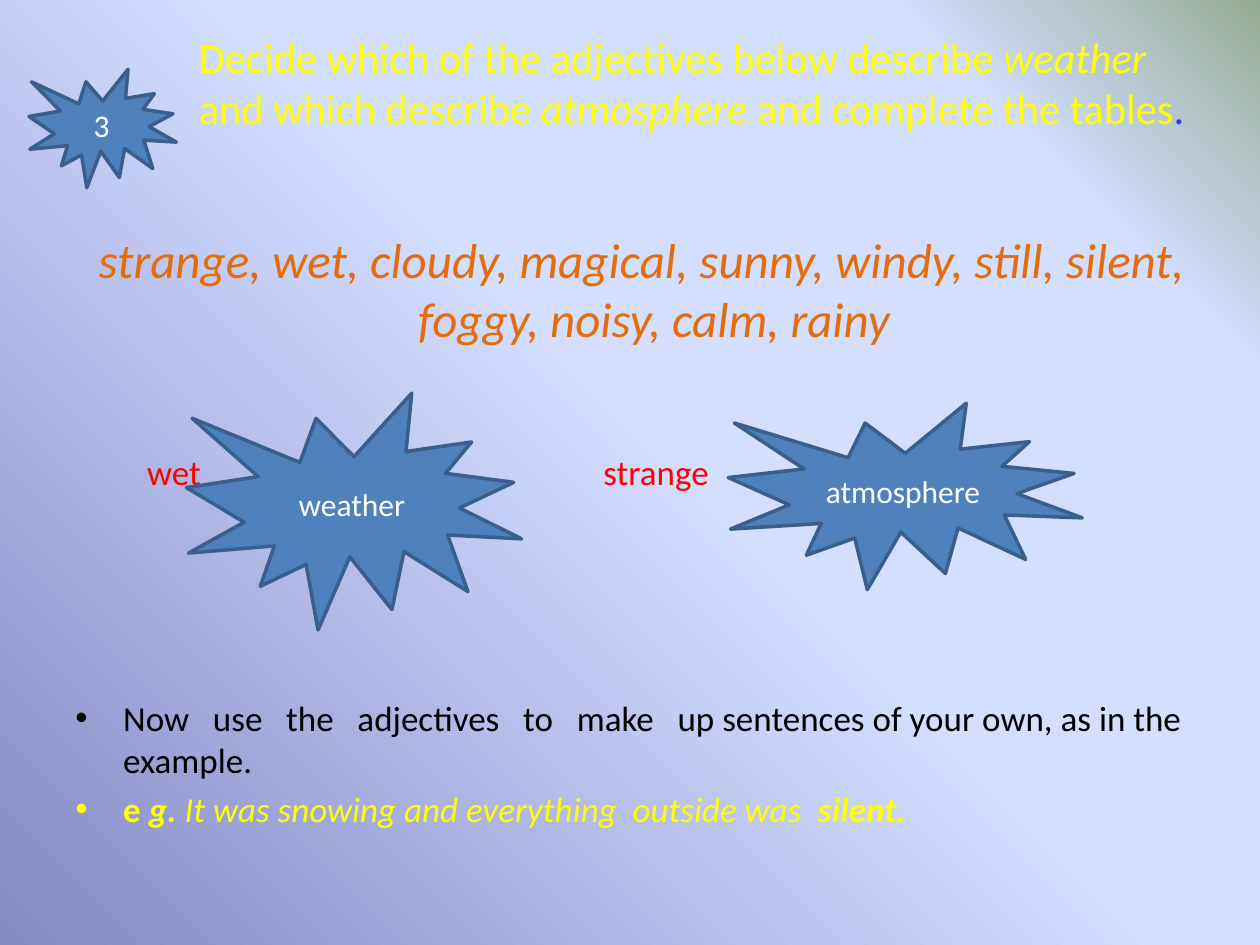
import pptx
import pptx.dml.color
import pptx.enum.shapes
import pptx.enum.text
import pptx.oxml
import pptx.oxml.ns
import pptx.util
from pptx.util import Inches

YELLOW, ORANGE, RED, BLUE = "FFFF00", "E46C0A", "FF0000", "3333FF"
BLACK, WHITE, SEAL_FILL, SEAL_LINE = "000000", "FFFFFF", "4F81BD", "3A5F8C"
MIDDLE = pptx.enum.text.MSO_ANCHOR.MIDDLE
CENTER = pptx.enum.text.PP_ALIGN.CENTER


def color(value):
    """Turn a hex string into a colour."""
    return pptx.dml.color.RGBColor.from_string(value)


def paint_background(slide, stops, angle):
    """Fill the slide with a linear gradient of (percent, colour) stops."""
    fill = slide.background.fill
    fill.gradient()
    fill.gradient_angle = angle
    stop_list = slide.element.find(".//" + pptx.oxml.ns.qn("a:gsLst"))
    for stop in list(stop_list):
        stop_list.remove(stop)
    for percent, value in stops:
        stop_list.append(pptx.oxml.parse_xml(
            f'<a:gs {pptx.oxml.ns.nsdecls("a")} pos="{percent * 1000}">'
            f'<a:srgbClr val="{value}"/></a:gs>'))


def add_span(para, text, size, value, bold=False, italic=False):
    """Add one run of text to a paragraph."""
    span = para.add_run()
    span.text = text
    font = span.font
    font.name, font.size = "Calibri", pptx.util.Pt(size)
    font.bold, font.italic = bold, italic
    font.color.rgb = color(value)


def add_text(slide, left, top, width, height, size, paragraphs):
    """Add a wrapping text box whose paragraphs are lists of spans."""
    box = slide.shapes.add_textbox(Inches(left), Inches(top), Inches(width), Inches(height))
    frame = box.text_frame
    frame.word_wrap = True
    for index, spans in enumerate(paragraphs):
        para = frame.add_paragraph() if index else frame.paragraphs[0]
        for text, *style in spans:
            add_span(para, text, size, *style)
    return frame


def indent(para, margin, first, bullet=None):
    """Set the margin and first-line indent of a paragraph, and its bullet."""
    properties = para._p.get_or_add_pPr()
    properties.set("marL", str(Inches(margin)))
    properties.set("indent", str(Inches(first)))
    if bullet:
        properties.append(pptx.oxml.parse_xml(
            f'<a:buFont {pptx.oxml.ns.nsdecls("a")} typeface="Arial"/>'))
        properties.append(pptx.oxml.parse_xml(
            f'<a:buChar {pptx.oxml.ns.nsdecls("a")} char="{bullet}"/>'))


def add_seal(slide, text, left, top, width, height):
    """Add a spiky burst with a centred caption."""
    seal = slide.shapes.add_shape(
        pptx.enum.shapes.MSO_SHAPE.EXPLOSION1,
        Inches(left), Inches(top), Inches(width), Inches(height))
    seal.shadow.inherit = False
    seal.fill.solid()
    seal.fill.fore_color.rgb = color(SEAL_FILL)
    seal.line.color.rgb = color(SEAL_LINE)
    seal.line.width = pptx.util.Pt(2)
    seal.text_frame.vertical_anchor = MIDDLE
    para = seal.text_frame.paragraphs[0]
    para.alignment = CENTER
    add_span(para, text, 18, WHITE)


def main():
    """Build the adjectives exercise slide."""
    deck = pptx.Presentation()
    deck.slide_width, deck.slide_height = Inches(10), Inches(7.5)
    slide = deck.slides.add_slide(deck.slide_layouts[6])
    paint_background(
        slide, [(0, "8488C4"), (53, "D4DEFF"), (83, "D4DEFF"), (100, "96AB94")], 45)

    title = add_text(slide, 1.48, 0, 8.02, 1.3, 24.3, [[
        ("Decide which of the adjectives below describe ", YELLOW),
        ("weather ", YELLOW, False, True),
        ("and which describe ", YELLOW),
        ("atmosphere ", YELLOW, False, True),
        ("and complete the tables", YELLOW),
        (".", BLUE)]])
    title.vertical_anchor = MIDDLE

    adjectives = add_text(slide, 0.5, 1.77, 9, 1.05, 28, [[
        ("strange, wet, cloudy, magical, sunny, windy, still, silent, "
         "foggy, noisy, calm, rainy", ORANGE, False, True)]])
    adjectives.paragraphs[0].alignment = CENTER
    indent(adjectives.paragraphs[0], 0.38, -0.2)

    for word, left in (("wet", 1.07), ("strange", 4.69)):
        add_text(slide, left, 3.53, 1.2, 0.43, 20, [[(word, RED)]])

    tasks = add_text(slide, 0.5, 5.48, 9, 1.22, 20, [
        [("Now   use   the   adjectives   to   make   up sentences of your own, "
          "as in the example.", BLACK)],
        [("e ", YELLOW, True),
         ("g. ", YELLOW, True, True),
         ("It was snowing and everything  outside was  ", YELLOW, False, True),
         ("silent.", YELLOW, True, True)]])
    for para in tasks.paragraphs:
        para.space_after = pptx.util.Pt(4)
        indent(para, 0.38, -0.38, "•")

    add_seal(slide, "3", 0.23, 0.55, 1.17, 0.94)
    add_seal(slide, "weather", 1.48, 3.12, 2.66, 1.88)
    add_seal(slide, "atmosphere", 5.78, 3.2, 2.81, 1.48)
    deck.save("out.pptx")


if __name__ == "__main__":
    main()
